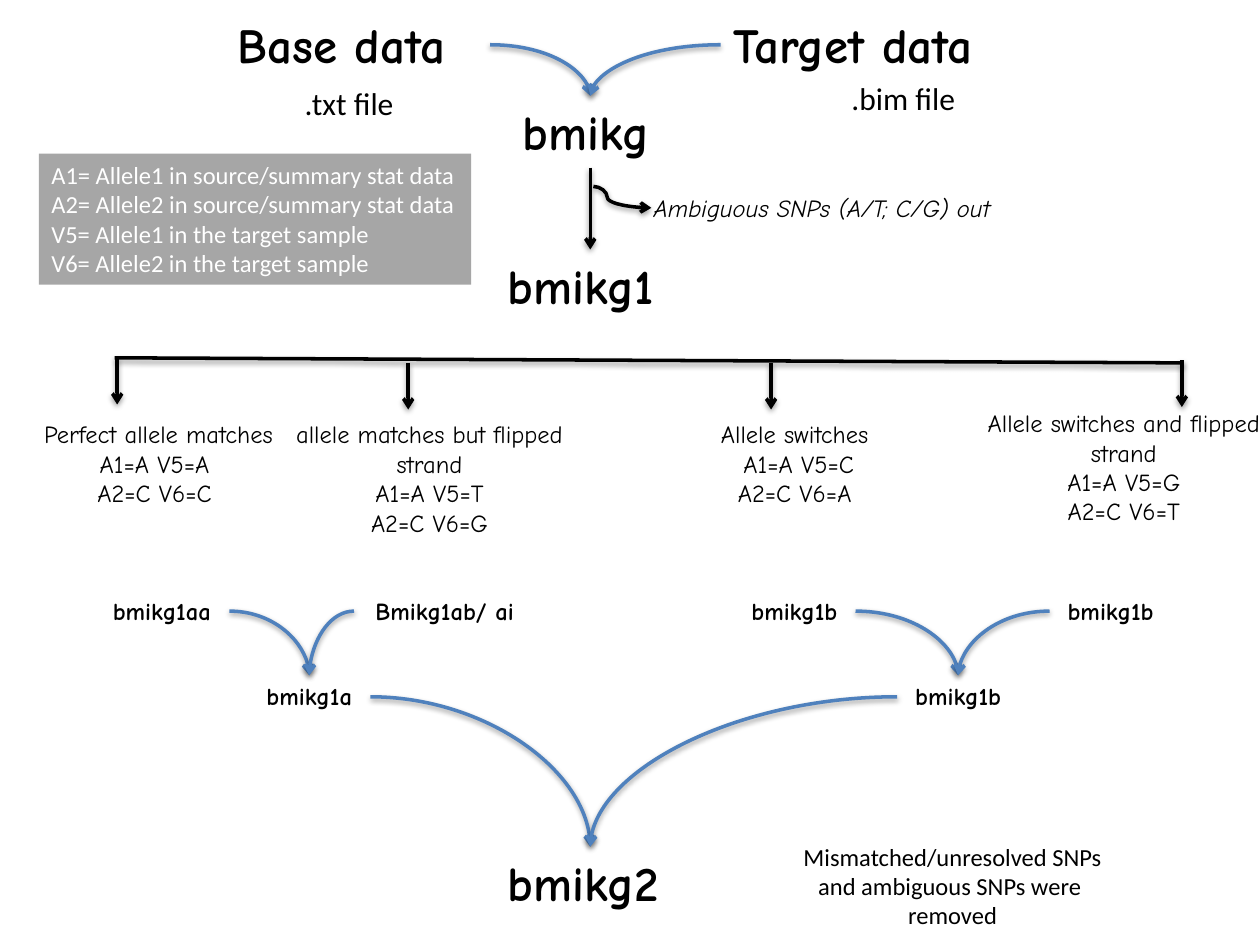
from lxml import etree
from pptx import Presentation
from pptx.dml.color import RGBColor
from pptx.enum.shapes import MSO_CONNECTOR, MSO_SHAPE
from pptx.enum.text import MSO_ANCHOR, MSO_AUTO_SIZE, PP_ALIGN
from pptx.oxml import parse_xml
from pptx.oxml.ns import nsdecls, qn
from pptx.util import Pt

EMU_PER_PX = 9144  # 100 px to the inch
STRAIGHT, CURVE = MSO_CONNECTOR.STRAIGHT, MSO_CONNECTOR.CURVE
LEFT, CENTER = PP_ALIGN.LEFT, PP_ALIGN.CENTER
TOP_SITE, BOTTOM_SITE, LEFT_SITE, RIGHT_SITE = 0, 2, 1, 3
HAND, PLAIN = "Comic Neue", "Calibri"
COLORS = {"ink": "000000", "merge": "4F81BD", "legend": "A6A6A6", "white": "FFFFFF"}
SHADOW = (
    f'<a:effectLst {nsdecls("a")}><a:outerShdw blurRad="40000" dist="20000" dir="5400000" '
    'rotWithShape="0"><a:srgbClr val="000000"><a:alpha val="38000"/></a:srgbClr>'
    "</a:outerShdw></a:effectLst>"
)


def px(length):
    return length * EMU_PER_PX


def rgb(name):
    return RGBColor.from_string(COLORS[name])


def write_text(shape, lines, size, font, align=LEFT, bold=False, italic=False,
               color="ink", wrap=False):
    frame = shape.text_frame
    frame.word_wrap = wrap
    frame.auto_size = MSO_AUTO_SIZE.SHAPE_TO_FIT_TEXT
    frame.vertical_anchor = MSO_ANCHOR.TOP
    frame.text = "\n".join(lines)
    for paragraph in frame.paragraphs:
        paragraph.alignment = align
        paragraph.font.size = Pt(size)
        paragraph.font.name = font
        paragraph.font.bold = bold
        paragraph.font.italic = italic
        paragraph.font.color.rgb = rgb(color)


def add_label(slide, box, lines, size=14, font=HAND, **style):
    label = slide.shapes.add_textbox(*map(px, box))
    write_text(label, lines, size, font, **style)
    return label


def add_dataset(slide, left, top, width, name):
    return add_label(slide, (left, top, width, 57), [name], size=28, bold=True)


def add_subset(slide, left, top, width, name):
    return add_label(slide, (left, top, width, 34), [name], align=CENTER, bold=True)


def add_legend(slide, box, lines):
    legend = slide.shapes.add_shape(MSO_SHAPE.RECTANGLE, *map(px, box))
    legend.shadow.inherit = False
    legend.fill.solid()
    legend.fill.fore_color.rgb = rgb("legend")
    legend.line.fill.background()
    write_text(legend, lines, 14, PLAIN, color="white")


def add_line(slide, start=(0, 0), end=(0, 0), kind=STRAIGHT, color="ink", arrow=True):
    line = slide.shapes.add_connector(kind, *map(px, start + end))
    line.line.color.rgb = rgb(color)
    line.line.width = Pt(2)
    if arrow:
        etree.SubElement(line.line._get_or_add_ln(), qn("a:tailEnd"), type="arrow")
    line._element.spPr.append(parse_xml(SHADOW))
    return line


def link(slide, source, source_site, target, **style):
    """Draw an arrow from a side of source to the top of target."""
    line = add_line(slide, **style)
    line.begin_connect(source, source_site)
    line.end_connect(target, TOP_SITE)
    return line


def merge(slide, left, right, target):
    """Join two datasets with quarter curves that meet above target."""
    for source, site in ((left, RIGHT_SITE), (right, LEFT_SITE)):
        curve = link(slide, source, site, target, kind=CURVE, color="merge")
        curve._element.spPr.find(qn("a:prstGeom")).set("prst", "curvedConnector2")


def add_side_exit(slide, start, end, bend):
    """Draw an S curve whose turn lies at bend (in 1/100000 of the width)."""
    curve = add_line(slide, start, end, kind=CURVE)
    guides = curve._element.spPr.find(qn("a:prstGeom")).find(qn("a:avLst"))
    etree.SubElement(guides, qn("a:gd"), name="adj1", fmla=f"val {bend}")


def add_filter_step(slide):
    base = add_dataset(slide, 179, 7, 210, "Base data")
    target = add_dataset(slide, 572, 7, 252, "Target data")
    joined = add_dataset(slide, 405, 76, 127, "bmikg")
    filtered = add_dataset(slide, 393, 198, 151, "bmikg1")
    add_label(slide, (232, 62, 92, 40), [".txt file"], size=18, font=PLAIN)
    add_label(slide, (666, 58, 103, 40), [".bim file"], size=18, font=PLAIN)
    add_label(slide, (509, 148, 320, 34), ["Ambiguous SNPs (A/T; C/G) out"], italic=True)
    merge(slide, base, target, joined)
    link(slide, joined, BOTTOM_SITE, filtered)
    add_side_exit(slide, (471, 148), (517, 165), 23900)


def add_allele_cases(slide):
    add_line(slide, (91, 284), (939, 288), arrow=False)
    for x, y in ((93, 284), (324, 288), (612, 288), (938, 286)):
        add_line(slide, (x, y), (x, y + 37))
    cases = (
        ((13, 328, 226, 81), False,
         ["Perfect allele matches", "A1=A V5=A ", "A2=C V6=C "]),
        ((218, 328, 246, 104), True,
         ["allele matches but flipped strand", "A1=A V5=T", "A2=C V6=G"]),
        ((555, 328, 158, 81), False,
         ["Allele switches ", "A1=A V5=C", "A2=C V6=A "]),
        ((764, 319, 256, 104), True,
         ["Allele switches and flipped strand", "A1=A V5=G", "A2=C V6=T"]),
    )
    for box, wrap, lines in cases:
        add_label(slide, box, lines, align=CENTER, wrap=wrap)


def add_merge_tree(slide):
    perfect = add_subset(slide, 75, 468, 107, "bmikg1aa")
    flipped = add_subset(slide, 281, 468, 144, "Bmikg1ab/ ai")
    switched = add_subset(slide, 582, 468, 97, "bmikg1b")
    switched_flipped = add_subset(slide, 833, 468, 97, "bmikg1b")
    matches = add_subset(slide, 197, 536, 97, "bmikg1a")
    switches = add_subset(slide, 712, 536, 97, "bmikg1b")
    final = add_dataset(slide, 393, 672, 151, "bmikg2")
    merge(slide, perfect, flipped, matches)
    merge(slide, switched, switched_flipped, switches)
    merge(slide, matches, switches, final)


def main():
    deck = Presentation()
    deck.slide_width, deck.slide_height = px(1000), px(750)
    slide = deck.slides.add_slide(deck.slide_layouts[6])
    add_filter_step(slide)
    add_allele_cases(slide)
    add_merge_tree(slide)
    add_legend(slide, (31, 122, 343, 104), [
        "A1= Allele1 in source/summary stat data",
        "A2= Allele2 in source/summary stat data",
        "V5= Allele1 in the target sample",
        "V6= Allele2 in the target sample",
    ])
    add_label(slide, (612, 663, 288, 81),
              ["Mismatched/unresolved SNPs and ambiguous SNPs were ", "removed"],
              font=PLAIN, align=CENTER, wrap=True)
    deck.save("out.pptx")


if __name__ == "__main__":
    main()
